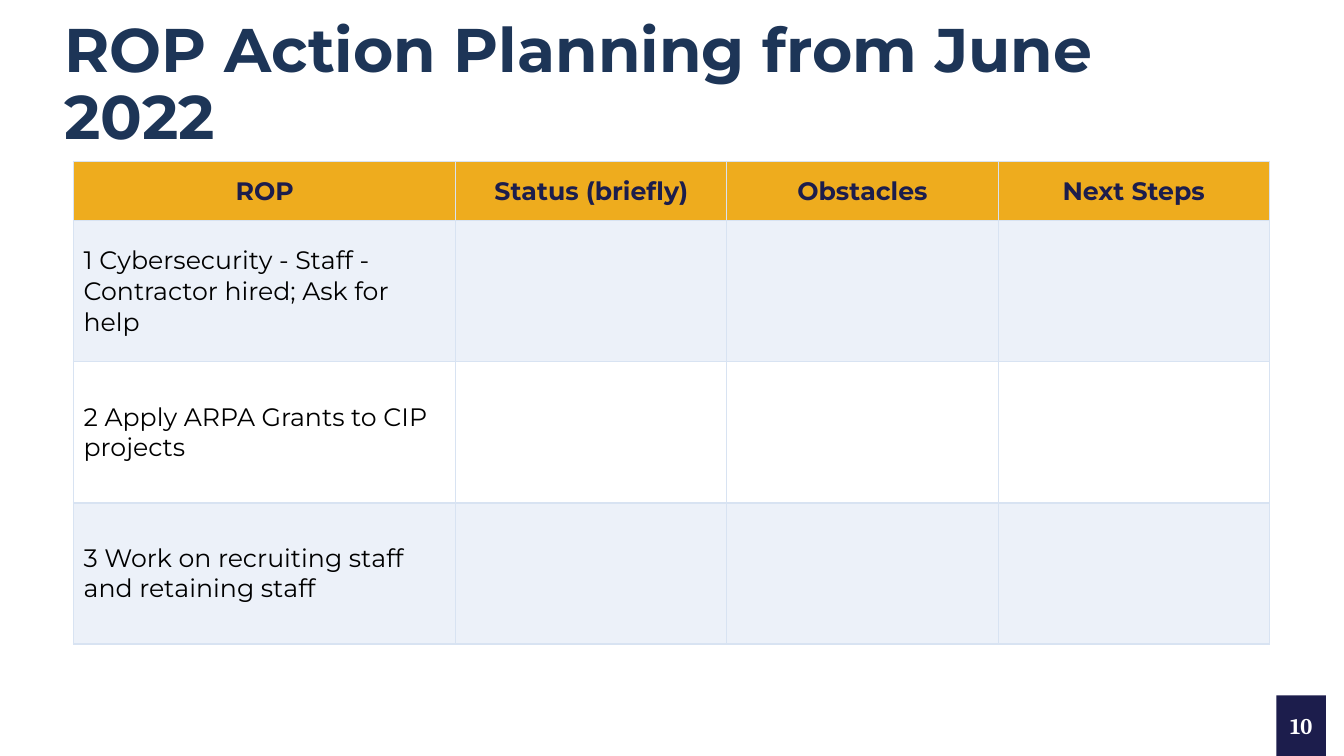
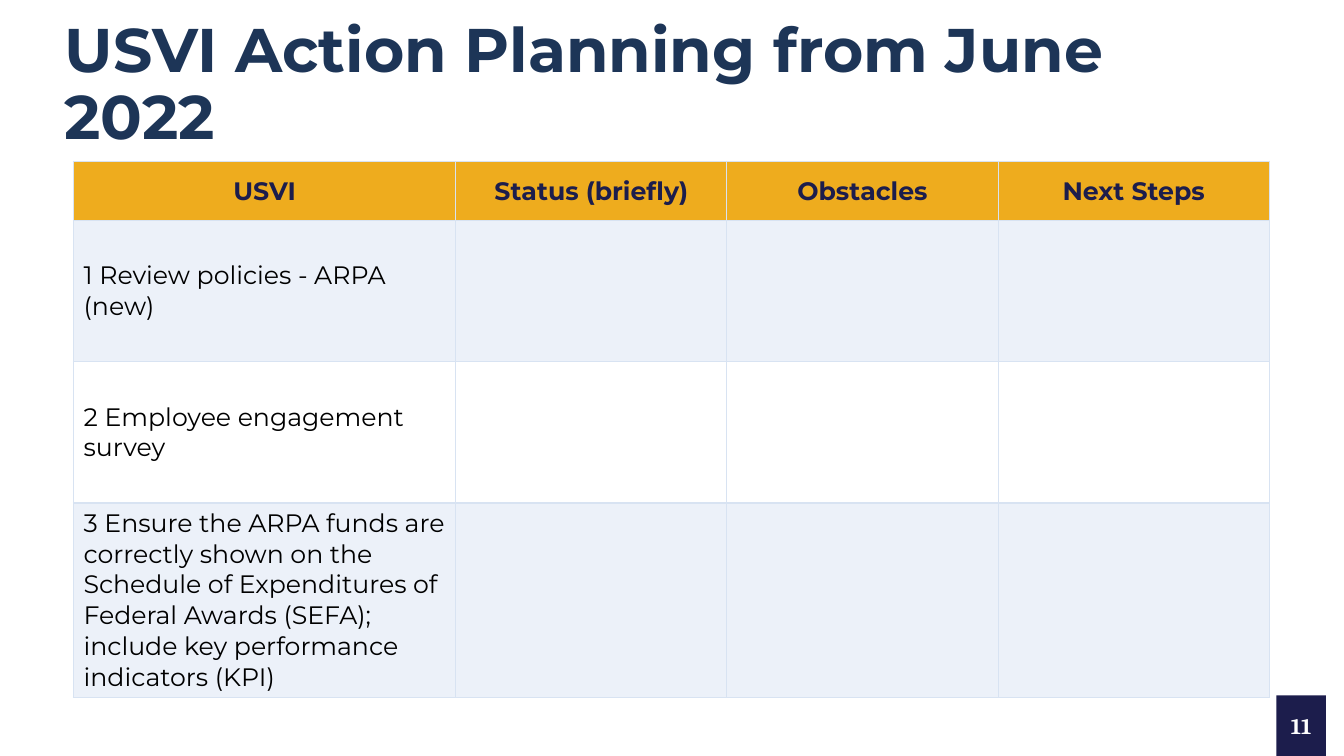
from lxml import etree
from pptx import Presentation
from pptx.dml.color import RGBColor
from pptx.enum import shapes, text
from pptx.oxml import ns
from pptx.util import Inches, Pt

HEADINGS = ["Status (briefly)", "Obstacles", "Next Steps"]
PLANS = [
    ("ROP", [
        "1 Cybersecurity - Staff - Contractor hired; Ask for help",
        "2 Apply ARPA Grants to CIP projects",
        "3 Work on recruiting staff and retaining staff",
    ]),
    ("USVI", [
        "1 Review policies - ARPA (new)",
        "2 Employee engagement survey",
        "3 Ensure the ARPA funds are correctly shown on the Schedule of "
        "Expenditures of Federal Awards (SEFA); include key performance "
        "indicators (KPI)",
    ]),
]
FIRST_PAGE = 10


def color(value):
    return RGBColor.from_string(value)


class Deck:
    TITLE = "1D3557"
    NAVY = "1C1D4C"
    GOLD = "EEAC1E"
    BAND = "ECF1F9"
    BORDER = "D8E3F2"
    WHITE = "FFFFFF"
    BLACK = "000000"
    FONT = "Montserrat"
    PAGE_FONT = "Cambria"
    COLUMNS = [3.79, 2.69, 2.69, 2.69]
    HEADER_HEIGHT = 0.59
    ROW_HEIGHT = 1.4

    def __init__(self):
        self.presentation = Presentation()
        self.presentation.slide_width = Inches(13.33)
        self.presentation.slide_height = Inches(7.5)
        self.slide = None

    def add_slide(self):
        layout = self.presentation.slide_layouts.get_by_name("Title Only")
        self.slide = self.presentation.slides.add_slide(layout)

    def add_text(self, frame, words, size, ink, bold=True, font=FONT,
                 align=text.PP_ALIGN.LEFT):
        paragraph = frame.paragraphs[0]
        paragraph.alignment = align
        run = paragraph.add_run()
        run.text = words
        run.font.name = font
        run.font.size = Pt(size)
        run.font.bold = bold
        run.font.color.rgb = color(ink)
        return paragraph

    def title(self, words):
        shape = self.slide.shapes.title
        shape.left, shape.top = Inches(0.54), Inches(0.33)
        shape.width, shape.height = Inches(11.99), Inches(1.05)
        frame = shape.text_frame
        frame.word_wrap = True
        frame.auto_size = text.MSO_AUTO_SIZE.NONE
        frame.vertical_anchor = text.MSO_ANCHOR.MIDDLE
        paragraph = self.add_text(frame, words, 44, self.TITLE)
        paragraph.line_spacing = 0.9

    def borders(self, cell):
        properties = cell._tc.get_or_add_tcPr()
        for side in ("lnL", "lnR", "lnT", "lnB"):
            line = etree.SubElement(properties, ns.qn(f"a:{side}"), w=str(Pt(1)))
            fill = etree.SubElement(line, ns.qn("a:solidFill"))
            etree.SubElement(fill, ns.qn("a:srgbClr"), val=self.BORDER)

    def cell(self, cell, fill):
        self.borders(cell)
        cell.fill.solid()
        cell.fill.fore_color.rgb = color(fill)
        cell.vertical_anchor = text.MSO_ANCHOR.MIDDLE

    def table(self, headings, actions):
        height = self.HEADER_HEIGHT + self.ROW_HEIGHT * len(actions)
        table = self.slide.shapes.add_table(
            len(actions) + 1, len(headings), Inches(0.73), Inches(1.6),
            Inches(sum(self.COLUMNS)), Inches(height)).table
        table.horz_banding = False
        for column, width in zip(table.columns, self.COLUMNS):
            column.width = Inches(width)
        for index, row in enumerate(table.rows):
            row.height = Inches(self.ROW_HEIGHT if index else self.HEADER_HEIGHT)
            band = self.BAND if index % 2 else self.WHITE
            for cell in row.cells:
                self.cell(cell, band if index else self.GOLD)
        for column, heading in enumerate(headings):
            self.add_text(table.cell(0, column).text_frame, heading, 18,
                          self.NAVY, align=text.PP_ALIGN.CENTER)
        for row, action in enumerate(actions, 1):
            self.add_text(table.cell(row, 0).text_frame, action, 18,
                          self.BLACK, bold=False)

    def page_number(self, number):
        shape = self.slide.shapes.add_shape(
            shapes.MSO_SHAPE.RECTANGLE, Inches(12.66), Inches(6.9),
            Inches(0.49), Inches(0.6))
        shape.shadow.inherit = False
        shape.fill.solid()
        shape.fill.fore_color.rgb = color(self.NAVY)
        shape.line.fill.background()
        frame = shape.text_frame
        frame.margin_left = frame.margin_right = 0
        frame.vertical_anchor = text.MSO_ANCHOR.MIDDLE
        self.add_text(frame, str(number), 16, self.WHITE, font=self.PAGE_FONT,
                      align=text.PP_ALIGN.CENTER)


def main():
    deck = Deck()
    for number, (group, actions) in enumerate(PLANS, FIRST_PAGE):
        deck.add_slide()
        deck.title(f"{group} Action Planning from June 2022")
        deck.table([group] + HEADINGS, actions)
        deck.page_number(number)
    deck.presentation.save("out.pptx")


if __name__ == "__main__":
    main()
